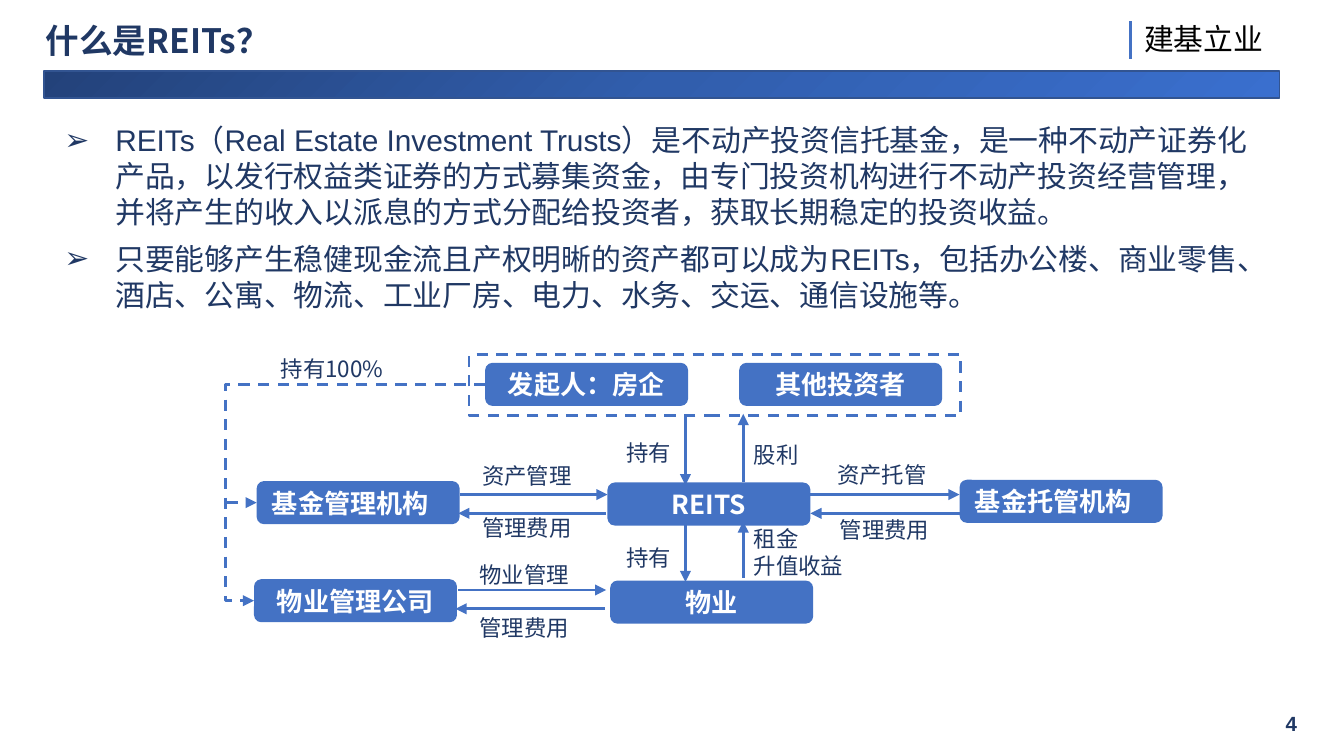
from copy import deepcopy
from typing import NamedTuple

from lxml.etree import SubElement
from pptx import Presentation
from pptx.dml.color import RGBColor
from pptx.enum.dml import MSO_LINE
from pptx.enum.shapes import MSO_CONNECTOR, MSO_SHAPE
from pptx.enum.text import MSO_ANCHOR, MSO_AUTO_SIZE, PP_ALIGN
from pptx.oxml.ns import qn
from pptx.util import Inches, Pt

NAVY = RGBColor(0x20, 0x38, 0x64)
BLUE = RGBColor(0x44, 0x72, 0xC4)
EDGE = RGBColor(0x32, 0x54, 0x91)
WHITE = RGBColor(0xFF, 0xFF, 0xFF)
BLACK = RGBColor(0, 0, 0)
SHADES = [
    (0, RGBColor(0x23, 0x42, 0x7A)),
    (0.5, RGBColor(0x31, 0x5E, 0xAD)),
    (1, RGBColor(0x3A, 0x6F, 0xCE)),
]
CJK = "Noto Sans CJK SC"
LATIN = "Arial"
BOX_W, BOX_H = 1.51, 0.32


class Box(NamedTuple):
    x: float
    y: float
    text: str
    align: PP_ALIGN = PP_ALIGN.CENTER


class Arrow(NamedTuple):
    x1: float
    y1: float
    x2: float
    y2: float


class Label(NamedTuple):
    x: float
    y: float
    lines: tuple
    w: float = 1.1


def add_run(para, text: str, size: float, color: RGBColor, bold=False, face=CJK) -> None:
    run = para.add_run()
    run.text = text
    font = run.font
    font.size, font.bold, font.name = Pt(size), bold, face
    font.color.rgb = color
    SubElement(font._element, qn("a:ea")).set("typeface", face)


def add_text(x: float, y: float, w: float, h: float):
    frame = slide.shapes.add_textbox(Inches(x), Inches(y), Inches(w), Inches(h)).text_frame
    frame.word_wrap = True
    return frame


def add_shape(kind: MSO_SHAPE, x: float, y: float, w: float, h: float):
    shape = slide.shapes.add_shape(kind, Inches(x), Inches(y), Inches(w), Inches(h))
    shape.shadow.inherit = False
    return shape


def add_box(box: Box):
    shape = add_shape(MSO_SHAPE.ROUNDED_RECTANGLE, box.x, box.y, BOX_W, BOX_H)
    shape.fill.solid()
    shape.fill.fore_color.rgb = BLUE
    shape.line.fill.background()
    shape.text_frame.vertical_anchor = MSO_ANCHOR.MIDDLE
    para = shape.text_frame.paragraphs[0]
    para.alignment = box.align
    add_run(para, box.text, 14, WHITE, True)
    return shape


def add_line(arrow: Arrow, kind=MSO_CONNECTOR.STRAIGHT, dash=False, head=True):
    line = slide.shapes.add_connector(kind, *map(Inches, arrow))
    line.line.color.rgb = BLUE
    line.line.width = Pt(1.5)
    if dash:
        line.line.dash_style = MSO_LINE.DASH
    if head:
        SubElement(line.line._get_or_add_ln(), qn("a:tailEnd")).set("type", "triangle")
    SubElement(line._element.spPr, qn("a:effectLst"))
    return line


def add_label(label: Label) -> None:
    frame = add_text(label.x, label.y, label.w, 0.1 + 0.2 * len(label.lines))
    for i, text in enumerate(label.lines):
        para = frame.add_paragraph() if i else frame.paragraphs[0]
        add_run(para, text, 12, NAVY)


# Widescreen page, 16 by 9
deck = Presentation()
deck.slide_width = Inches(10)
deck.slide_height = Inches(10) * 9 // 16
slide = deck.slides.add_slide(deck.slide_layouts[5])

# Header band
band = add_shape(MSO_SHAPE.RECTANGLE, 0.33, 0.53, 9.19, 0.2)
band.fill.gradient()
band.fill.gradient_angle = 315
stops = band._element.spPr.find(".//" + qn("a:gsLst"))
stops.insert(1, deepcopy(stops[0]))
for stop, (pos, shade) in zip(band.fill.gradient_stops, SHADES):
    stop.position = pos
    stop.color.rgb = shade
band.line.color.rgb = EDGE
band.line.width = Pt(1)

# Motto
motto = add_shape(MSO_SHAPE.SNIP_2_DIAG_RECTANGLE, 8.43, 0.12, 1.35, 0.33)
motto.adjustments[0], motto.adjustments[1] = 0, 0.26
motto.fill.solid()
motto.fill.fore_color.rgb = WHITE
motto.line.fill.background()
frame = motto.text_frame
frame.margin_left = frame.margin_right = frame.margin_top = frame.margin_bottom = Inches(0.04)
frame.vertical_anchor = MSO_ANCHOR.MIDDLE
frame.paragraphs[0].alignment = PP_ALIGN.LEFT
add_run(frame.paragraphs[0], "建基立业", 16, BLACK)
add_line(Arrow(8.41, 0.16, 8.41, 0.44), head=False)

# Title
title = slide.shapes.title
title.left, title.top = Inches(0.24), Inches(0.15)
title.width, title.height = Inches(5.89), Inches(0.33)
title.text_frame.vertical_anchor = MSO_ANCHOR.MIDDLE
title.text_frame.auto_size = MSO_AUTO_SIZE.NONE
para = title.text_frame.paragraphs[0]
para.alignment, para.line_spacing = PP_ALIGN.LEFT, 0.9
add_run(para, "什么是REITs？", 18, NAVY, True)

# Page number
frame = add_text(7.5, 5.23, 2.25, 0.3)
frame.vertical_anchor = MSO_ANCHOR.MIDDLE
frame.paragraphs[0].alignment = PP_ALIGN.RIGHT
add_run(frame.paragraphs[0], "4", 11, NAVY, True, LATIN)

# Definition bullets
POINTS = [
    "REITs（Real Estate Investment Trusts）是不动产投资信托基金，是一种不动产证券化产品，"
    "以发行权益类证券的方式募集资金，由专门投资机构进行不动产投资经营管理，"
    "并将产生的收入以派息的方式分配给投资者，获取长期稳定的投资收益。",
    "只要能够产生稳健现金流且产权明晰的资产都可以成为REITs，包括办公楼、商业零售、"
    "酒店、公寓、物流、工业厂房、电力、水务、交运、通信设施等。",
]
frame = add_text(0.38, 0.86, 9.15, 1.53)
for i, point in enumerate(POINTS):
    para = frame.add_paragraph() if i else frame.paragraphs[0]
    props = para._p.get_or_add_pPr()
    props.set("marL", str(Inches(0.38)))
    props.set("indent", str(-Inches(0.38)))
    SubElement(props, qn("a:buFont")).set("typeface", LATIN)
    SubElement(props, qn("a:buChar")).set("char", "➢")
    if i:
        para.space_before = Pt(6)
    add_run(para, point, 16, NAVY, face=LATIN)

# Investor frame
group = add_shape(MSO_SHAPE.RECTANGLE, 3.49, 2.64, 3.66, 0.45)
group.fill.background()
group.line.color.rgb = BLUE
group.line.width = Pt(1.5)
group.line.dash_style = MSO_LINE.DASH

# Parties
manager = add_box(Box(1.91, 3.58, "基金管理机构", PP_ALIGN.LEFT))
for box in [
    Box(3.61, 2.7, "发起人：房企"),
    Box(5.5, 2.7, "其他投资者"),
    Box(4.52, 3.59, "REITS"),
    Box(7.14, 3.57, "基金托管机构", PP_ALIGN.LEFT),
    Box(1.89, 4.31, "物业管理公司"),
    Box(4.54, 4.32, "物业"),
]:
    add_box(box)

# Flows between parties
for arrow in [
    Arrow(3.42, 3.68, 4.52, 3.68), Arrow(4.51, 3.82, 3.41, 3.82),
    Arrow(6.03, 3.68, 7.14, 3.68), Arrow(7.14, 3.82, 6.03, 3.82),
    Arrow(3.41, 4.39, 4.51, 4.39), Arrow(4.5, 4.53, 3.39, 4.53),
    Arrow(5.1, 3.09, 5.1, 3.61), Arrow(5.53, 3.59, 5.53, 3.08),
    Arrow(5.1, 3.91, 5.1, 4.33), Arrow(5.53, 4.3, 5.53, 3.88),
]:
    add_line(arrow)

# Ownership by the sponsor
bend = add_line(Arrow(3.61, 2.86, 1.89, 4.47), MSO_CONNECTOR.ELBOW, dash=True)
guide = SubElement(bend._element.spPr.find(".//" + qn("a:avLst")), qn("a:gd"))
guide.set("name", "adj1")
guide.set("fmla", "val 112300")
add_line(Arrow(1.69, 3.74, 1.91, 3.74), dash=True).end_connect(manager, 1)

# Flow labels
for label in [
    Label(3.49, 3.39, ("资产管理",)), Label(3.49, 3.78, ("管理费用",)),
    Label(6.13, 3.38, ("资产托管",)), Label(6.15, 3.79, ("管理费用",)),
    Label(3.47, 4.13, ("物业管理",)), Label(3.47, 4.52, ("管理费用",)),
    Label(4.56, 3.22, ("持有",)), Label(5.51, 3.23, ("股利",)),
    Label(4.56, 4, ("持有",)), Label(5.51, 3.86, ("租金", "升值收益")),
    Label(1.99, 2.59, ("持有100%",), 1.19),
]:
    add_label(label)

deck.save("out.pptx")
